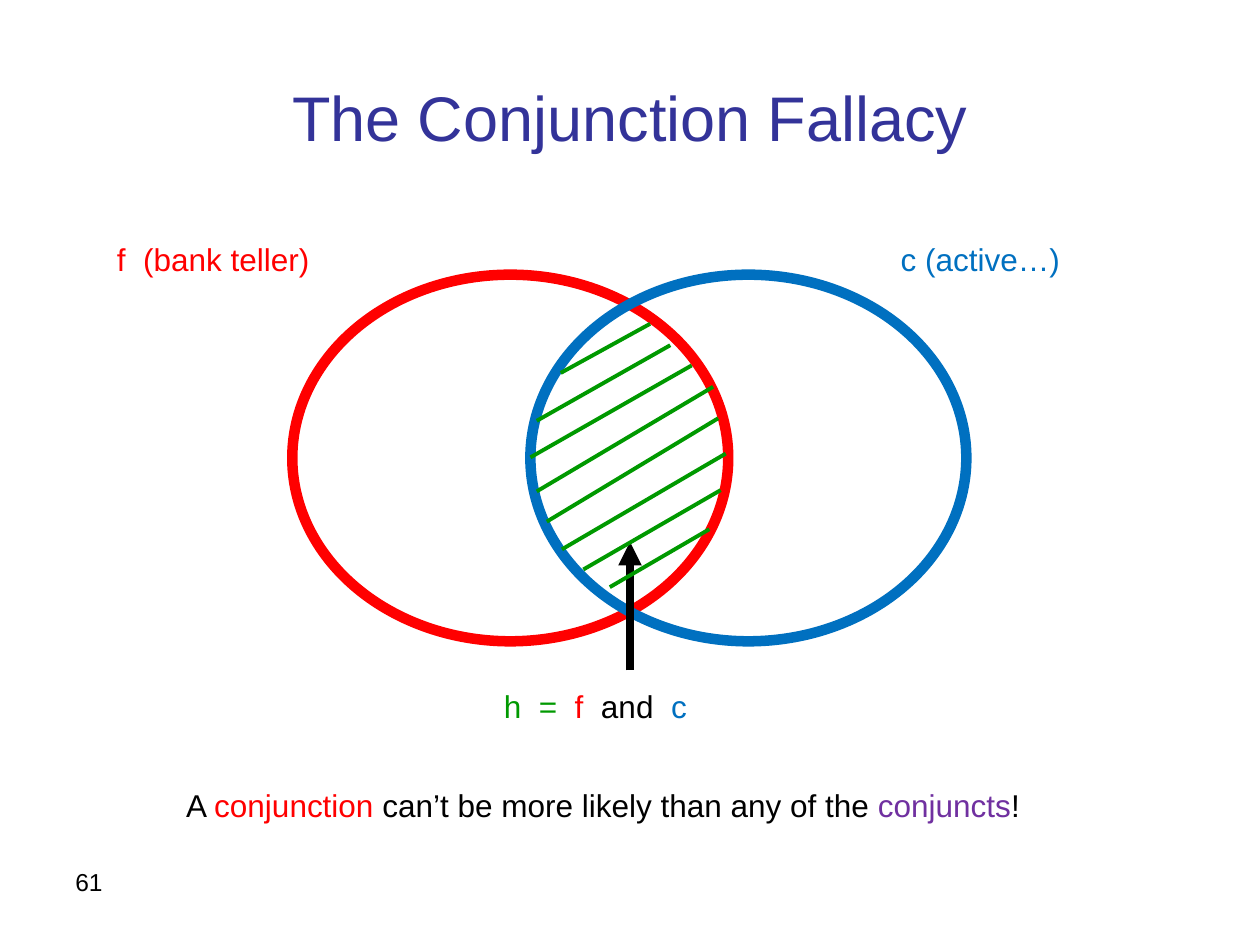
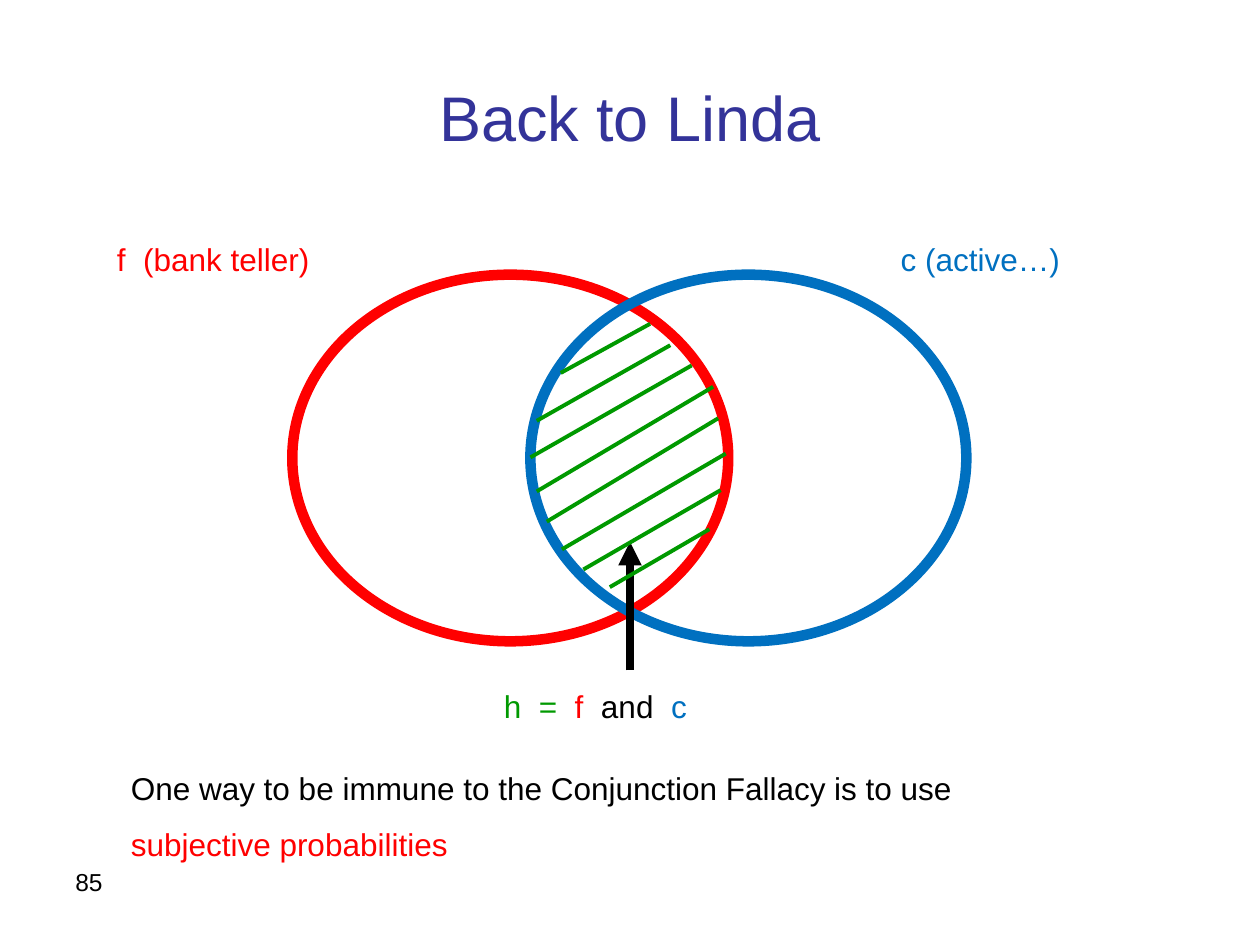
from lxml import etree
from pptx import Presentation
from pptx.dml.color import RGBColor
from pptx.enum.shapes import MSO_CONNECTOR, MSO_SHAPE
from pptx.enum.text import MSO_ANCHOR, PP_ALIGN
from pptx.oxml.ns import qn
from pptx.util import Pt

PX = 9144
FONT = "Arial"
BODY_SIZE = 18

BLACK = RGBColor(0x00, 0x00, 0x00)
WHITE = RGBColor(0xFF, 0xFF, 0xFF)
INDIGO = RGBColor(0x33, 0x33, 0x99)
RED = RGBColor(0xFF, 0x00, 0x00)
BLUE = RGBColor(0x00, 0x70, 0xC0)
GREEN = RGBColor(0x00, 0x99, 0x00)
PURPLE = RGBColor(0x70, 0x30, 0xA0)

ELLIPSE = MSO_SHAPE.OVAL
STRAIGHT = MSO_CONNECTOR.STRAIGHT
LEFT = PP_ALIGN.LEFT
CENTER = PP_ALIGN.CENTER
TOP = MSO_ANCHOR.TOP
MIDDLE = MSO_ANCHOR.MIDDLE

HATCHES = [
    ((516, 257), (445, 296)),
    ((532, 274), (426, 334)),
    ((549, 290), (421, 363)),
    ((566, 307), (426, 390)),
    ((570, 332), (434, 414)),
    ((576, 360), (446, 436)),
    ((572, 389), (463, 452)),
    ((563, 420), (484, 466)),
]


def emu(*lengths):
    return [length * PX for length in lengths]


def add_text(slide, box, pieces, size=BODY_SIZE, align=LEFT, anchor=TOP, spacing=1.0):
    frame = slide.shapes.add_textbox(*emu(*box)).text_frame
    frame.word_wrap = True
    frame.vertical_anchor = anchor
    paragraph = frame.paragraphs[0]
    paragraph.alignment = align
    paragraph.line_spacing = spacing
    for words, color in pieces:
        run = paragraph.add_run()
        run.text = words
        run.font.name = FONT
        run.font.size = Pt(size)
        run.font.color.rgb = color


def add_event(slide, left, color, fill=None):
    event = slide.shapes.add_shape(ELLIPSE, *emu(left, 218, 346, 291))
    event.shadow.inherit = False
    event.line.color.rgb = color
    event.line.width = Pt(6)
    if fill is None:
        event.fill.background()
    else:
        event.fill.solid()
        event.fill.fore_color.rgb = fill


def add_line(slide, start, end, color, width, arrow=False):
    line = slide.shapes.add_connector(STRAIGHT, *emu(*start, *end))
    line.line.color.rgb = color
    line.line.width = Pt(width)
    properties = line._element.spPr
    if arrow:
        tail = etree.SubElement(properties.find(qn("a:ln")), qn("a:tailEnd"))
        tail.set("type", "triangle")
    etree.SubElement(properties, qn("a:effectLst"))


def add_venn(slide):
    add_event(slide, 232, RED, WHITE)
    add_event(slide, 421, BLUE)
    add_text(slide, (83, 186, 213, 40), [("f  (bank teller)", RED)])
    add_text(slide, (705, 186, 228, 40), [("c (active…)", BLUE)])
    add_text(slide, (390, 540, 189, 40),
             [("h  =  ", GREEN), ("f  ", RED), ("and  ", BLACK), ("c", BLUE)])
    add_line(slide, (500, 532), (500, 430), BLACK, 4.5, arrow=True)
    for start, end in HATCHES:
        add_line(slide, start, end, GREEN, 2.25)


def add_venn_slide(deck, number, title):
    slide = deck.slides.add_slide(deck.slide_layouts[6])
    add_text(slide, (50, 683, 233, 52), [(number, BLACK)], size=14)
    add_text(slide, (50, 30, 900, 125), [(title, INDIGO)],
             size=36, align=CENTER, anchor=MIDDLE)
    add_venn(slide)
    return slide


def main():
    deck = Presentation()
    deck.slide_width, deck.slide_height = emu(1000, 750)

    fallacy = add_venn_slide(deck, "61", "The Conjunction Fallacy")
    add_text(fallacy, (138, 619, 724, 40), [
        ("A ", BLACK),
        ("conjunction", RED),
        (" can’t be more likely than any of the ", BLACK),
        ("conjuncts", PURPLE),
        ("!", BLACK),
    ])

    linda = add_venn_slide(deck, "85", "Back to Linda")
    add_text(linda, (94, 590, 784, 95), [
        ("One way to be immune to the Conjunction Fallacy is to use ", BLACK),
        ("subjective probabilities", RED),
    ], spacing=1.5)

    deck.save("out.pptx")


if __name__ == "__main__":
    main()
